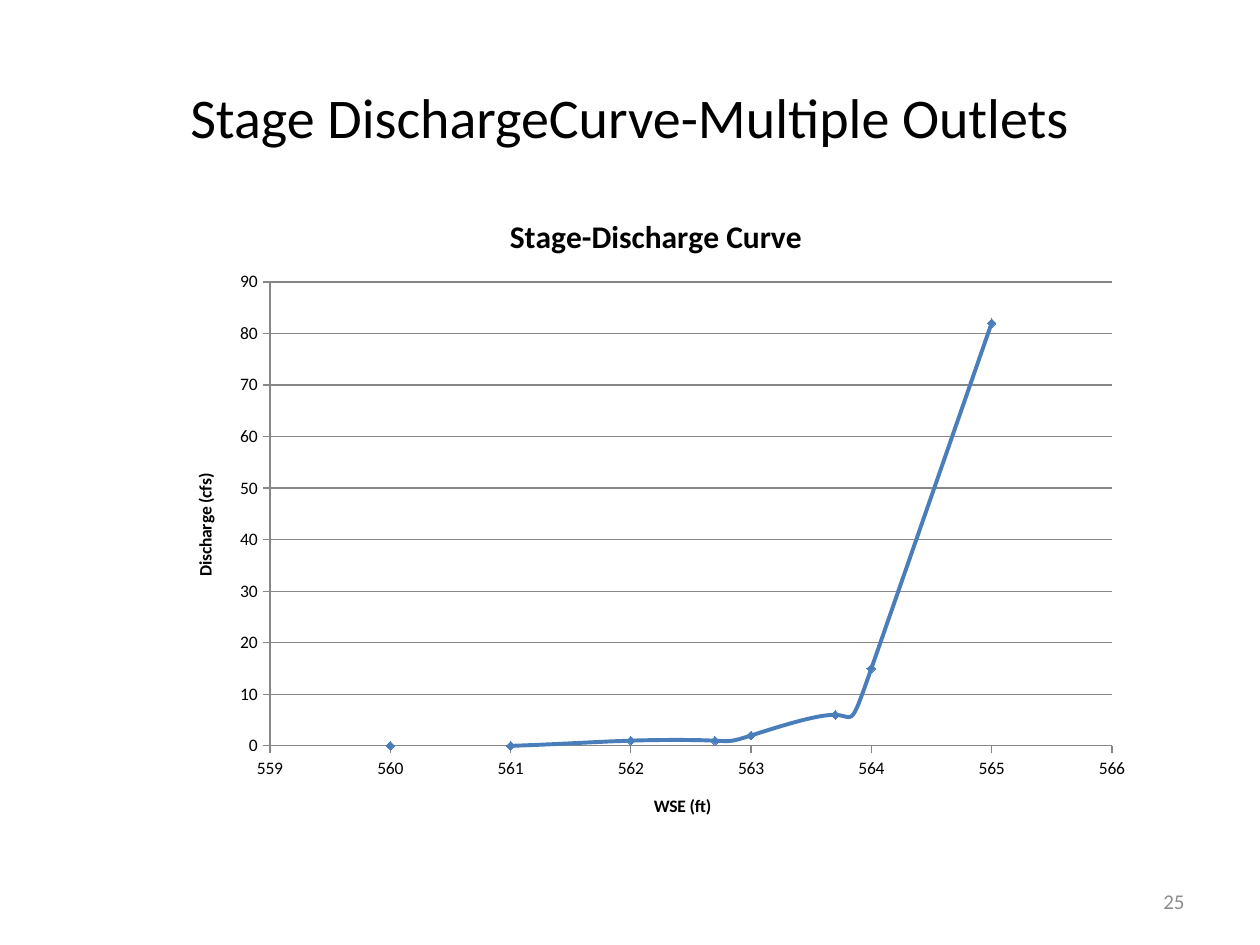
import pptx
import pptx.util
import pptx.chart.data
import pptx.dml.color
import pptx.enum.chart
import pptx.enum.text
import pptx.oxml

SCALE = 914400 / 126
FONT = "Calibri"
COLORS = {"text": "000000", "page": "8C8C8C", "axis": "868686",
          "line": "4A7EBB", "mark": "4F81BD"}
POINTS = [(560, 0), (561, 0), (562, 1), (562.7, 1),
          (563, 2), (563.7, 6), (564, 15), (565, 82)]
WIDE, HIGH = 976, 655
PLOT = {"x": 102 / WIDE, "y": 93 / HIGH, "w": 842 / WIDE, "h": 464 / HIGH}


def px(n):
    return pptx.util.Emu(round(n * SCALE))


def color(key):
    return pptx.dml.color.RGBColor.from_string(COLORS[key])


def style(font, size, key, bold=False):
    font.name = FONT
    font.size = pptx.util.Pt(size)
    font.bold = bold
    font.color.rgb = color(key)


def write(frame, text, size, key, align=None, bold=False):
    para = frame.paragraphs[0]
    para.alignment = align
    run = para.add_run()
    run.text = text
    style(run.font, size, key, bold)


def place(shape, left, top, width, height):
    shape.left, shape.top = px(left), px(top)
    shape.width, shape.height = px(width), px(height)


def add_title(slide, text):
    title = slide.shapes.title
    place(title, 63, 38, 1134, 157)
    title.text_frame.vertical_anchor = pptx.enum.text.MSO_ANCHOR.MIDDLE
    write(title.text_frame, text, 32, "text", pptx.enum.text.PP_ALIGN.CENTER)


def add_page(slide, text):
    box = slide.shapes.add_textbox(px(903), px(876), px(294), px(50))
    frame = box.text_frame
    frame.word_wrap = True
    frame.vertical_anchor = pptx.enum.text.MSO_ANCHOR.MIDDLE
    write(frame, text, 12, "page", pptx.enum.text.PP_ALIGN.RIGHT)


def set_line(line, key, width):
    line.color.rgb = color(key)
    line.width = pptx.util.Pt(width)


def set_axis(axis, title, low, high, step):
    axis.minimum_scale, axis.maximum_scale = low, high
    axis.major_unit = step
    axis.major_tick_mark = pptx.enum.chart.XL_TICK_MARK.OUTSIDE
    axis.minor_tick_mark = pptx.enum.chart.XL_TICK_MARK.NONE
    axis.tick_labels.number_format = "General"
    axis.tick_labels.number_format_is_linked = False
    set_line(axis.format.line, "axis", 0.75)
    write(axis.axis_title.text_frame, title, 10, "text", bold=True)


def set_plot(chart):
    area = chart._chartSpace.chart.plotArea
    for old in area.findall(pptx.oxml.ns.qn("c:layout")):
        area.remove(old)
    modes = "".join(f'<c:{k}Mode val="edge"/>' for k in "xy")
    sizes = "".join(f'<c:{k} val="{v:.4f}"/>' for k, v in PLOT.items())
    area.insert(0, pptx.oxml.parse_xml(
        f'<c:layout {pptx.oxml.ns.nsdecls("c")}><c:manualLayout>'
        f'<c:layoutTarget val="inner"/>{modes}{sizes}'
        '</c:manualLayout></c:layout>'))


def set_curve(curve):
    curve._element.find(pptx.oxml.ns.qn("c:smooth")).set("val", "1")
    set_line(curve.format.line, "line", 2.25)
    mark = curve.marker
    mark.style = pptx.enum.chart.XL_MARKER_STYLE.DIAMOND
    mark.size = 5
    mark.format.fill.solid()
    mark.format.fill.fore_color.rgb = color("mark")
    set_line(mark.format.line, "line", 0.75)


def add_curve(slide):
    data = pptx.chart.data.XyChartData()
    series = data.add_series("Series 1")
    for x, y in POINTS:
        series.add_data_point(x, y)
    kind = pptx.enum.chart.XL_CHART_TYPE.XY_SCATTER_SMOOTH
    chart = slide.shapes.add_chart(
        kind, px(168), px(189), px(WIDE), px(HIGH), data).chart
    style(chart.font, 10, "text")
    chart.has_legend = False
    chart.has_title = True
    write(chart.chart_title.text_frame, "Stage-Discharge Curve", 18, "text",
          bold=True)
    chart.chart_title.include_in_layout = False
    set_axis(chart.category_axis, "WSE (ft)", 559, 566, 1)
    set_axis(chart.value_axis, "Discharge (cfs)", 0, 90, 10)
    chart.category_axis.has_major_gridlines = False
    chart.value_axis.has_major_gridlines = True
    set_line(chart.value_axis.major_gridlines.format.line, "axis", 0.75)
    set_plot(chart)
    plot = chart.plots[0]
    plot.vary_by_categories = False
    set_curve(plot.series[0])


def main():
    deck = pptx.Presentation()
    deck.slide_width, deck.slide_height = px(1260), px(945)
    slide = deck.slides.add_slide(deck.slide_layouts[5])
    add_title(slide, "Stage DischargeCurve-Multiple Outlets")
    add_page(slide, "25")
    add_curve(slide)
    deck.save("out.pptx")


if __name__ == "__main__":
    main()
